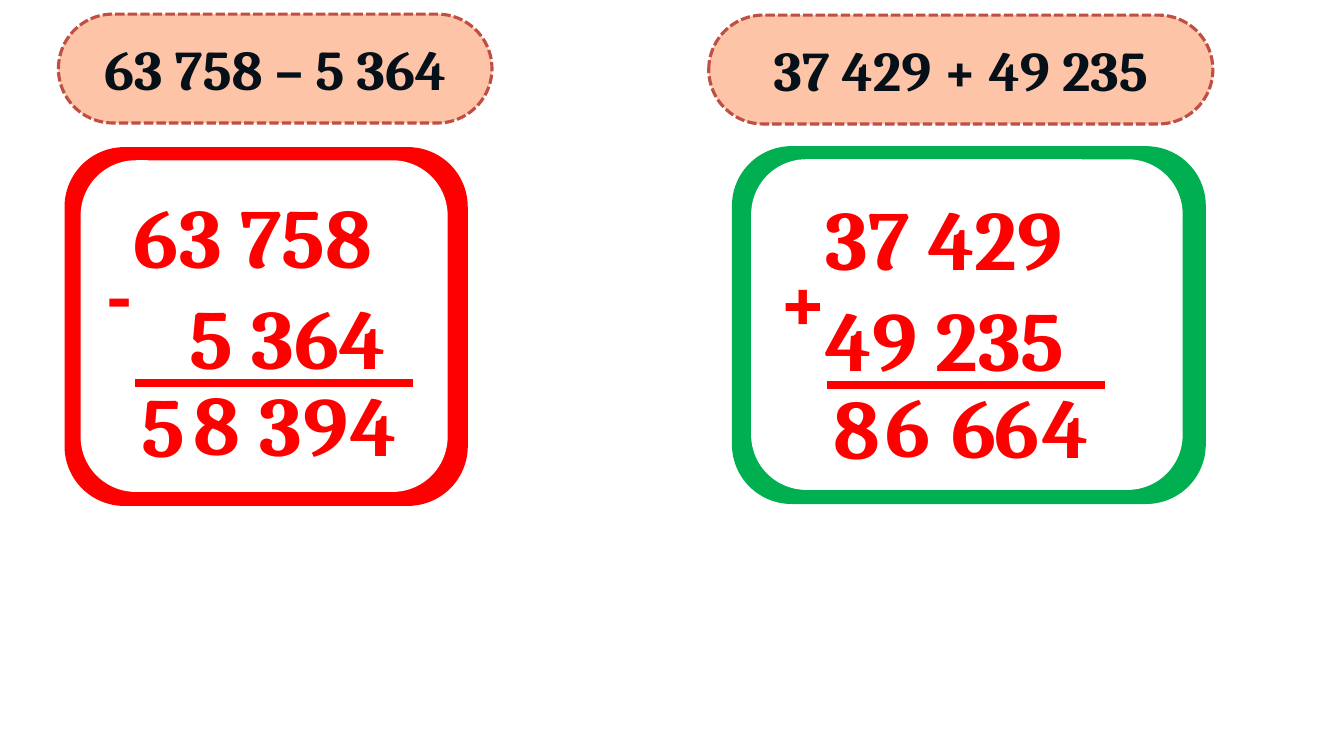
from lxml import etree
from pptx import Presentation, util as u
from pptx.dml.color import RGBColor
from pptx.enum import dml, shapes, text
from pptx.oxml.ns import qn

CELL = 0.1
RED, GREEN, WHITE = "FF0000", "00B050", "FFFFFF"
PEACH, RUST, INK = "FDC4A7", "C04E42", "061018"
DIGIT_PLACES = [(0.8, 18.8), (5.9, 18.6), (12.5, 18.7), (16.8, 18.7), (21.5, 18.7)]


def colour(value):
    return RGBColor.from_string(value)


def cells(*counts):
    return [u.Inches(count * CELL) for count in counts]


class SumSlide:
    """Draws column sums on one page, measured in cells of a tenth of an inch."""

    def __init__(self, deck, font="Cambria"):
        self.page = deck.slides.add_slide(deck.slide_layouts[6])
        self.font = font

    def add_span(self, para, words, size, ink):
        span = para.add_run()
        span.text = words
        span.font.name = self.font
        span.font.size = u.Pt(size)
        span.font.bold = True
        span.font.color.rgb = colour(ink)

    def rounded(self, place, fill):
        box = self.page.shapes.add_shape(shapes.MSO_SHAPE.ROUNDED_RECTANGLE, *cells(*place))
        box.shadow.inherit = False
        box.fill.solid()
        box.fill.fore_color.rgb = colour(fill)
        box.line.fill.background()
        return box

    def pill(self, place, words):
        box = self.rounded(place, PEACH)
        box.adjustments[0] = 0.5
        box.line.color.rgb = colour(RUST)
        box.line.width = u.Pt(2.25)
        box.line.dash_style = dml.MSO_LINE.SQUARE_DOT
        frame = box.text_frame
        frame.vertical_anchor = text.MSO_ANCHOR.MIDDLE
        para = frame.paragraphs[0]
        para.alignment = text.PP_ALIGN.CENTER
        self.add_span(para, words, 40, INK)

    def numbers(self, place, rows, align=text.PP_ALIGN.LEFT):
        box = self.page.shapes.add_textbox(*cells(*place))
        frame = box.text_frame
        frame.word_wrap = True
        frame.auto_size = text.MSO_AUTO_SIZE.SHAPE_TO_FIT_TEXT
        for index, (words, indent) in enumerate(rows):
            para = frame.add_paragraph() if index else frame.paragraphs[0]
            para.alignment = align
            if indent:
                para._p.get_or_add_pPr().set("marL", str(cells(indent)[0]))
            self.add_span(para, words, 60, RED)

    def rule(self, left, top, width):
        line = self.page.shapes.add_connector(
            shapes.MSO_CONNECTOR.STRAIGHT, *cells(left, top, left + width, top))
        line.line.color.rgb = colour(RED)
        line.line.width = u.Pt(6)
        etree.SubElement(line._element.spPr, qn("a:effectLst"))

    def column_sum(self, origin, rows, sign, sign_place, answer):
        left, top = origin
        self.numbers((left, top, 30.4, 21.2), rows, text.PP_ALIGN.JUSTIFY)
        self.numbers((*sign_place, 6.2, 11.1), [(sign, 0)])
        self.rule(left + 1.1, top + 20.2, 27.6)
        for digit, (across, down) in zip(answer, DIGIT_PLACES):
            self.numbers((left + across, top + down, 8, 11.1), [(digit, 0)])


def main():
    deck = Presentation()
    deck.slide_width, deck.slide_height = u.Inches(13.33), u.Inches(7.5)
    slide = SumSlide(deck)

    slide.rounded((6.4, 14.6, 40, 35.6), RED)
    slide.rounded((8, 15.9, 36.4, 32.9), WHITE)
    slide.pill((5.8, 1.4, 43, 10.8), "63 758 – 5 364")
    slide.column_sum((12.3, 17.8), [("63 758", 0), ("5 364", 5.5)], "-", (9.6, 23.5), "58394")

    slide.rounded((72.6, 14.5, 47, 35.5), GREEN)
    slide.rounded((74.5, 15.8, 42.8, 32.8), WHITE)
    slide.pill((70.3, 1.5, 50, 10.8), "37 429 + 49 235")
    slide.column_sum((80.9, 18), [("37 429", 0), ("49 235", 0)], "+", (76.2, 24.1), "86664")

    deck.save("out.pptx")


if __name__ == "__main__":
    main()
